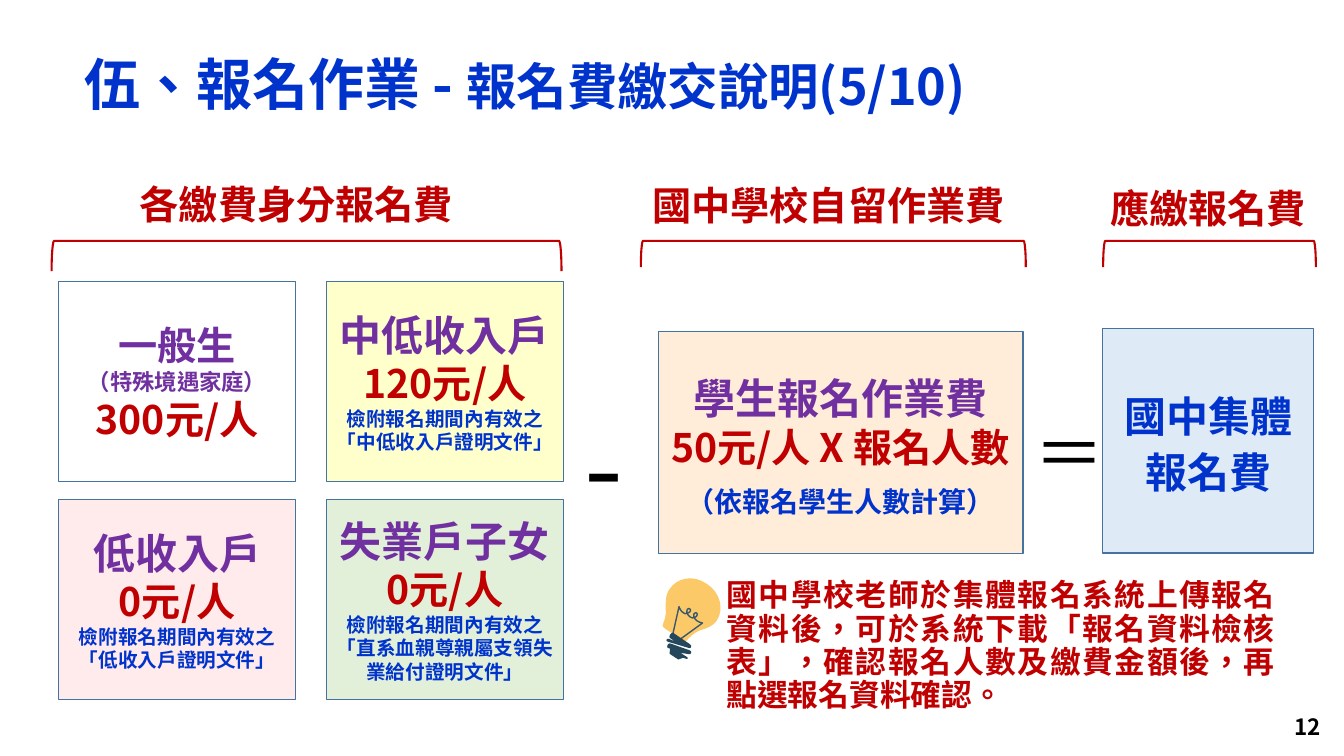
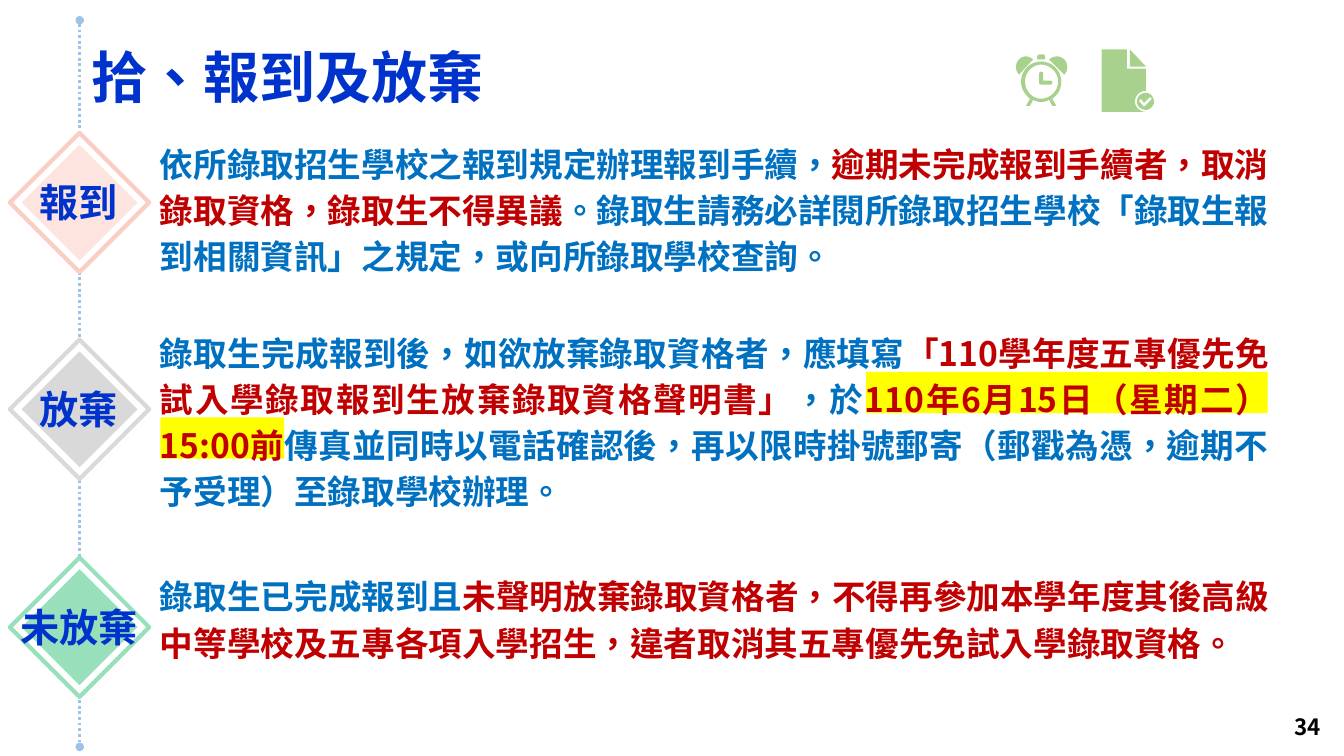
import lxml.etree
import pptx
import pptx.dml.color
import pptx.enum.dml
import pptx.enum.lang
import pptx.enum.shapes
import pptx.enum.text
import pptx.oxml.ns
import pptx.util

Cm = pptx.util.Cm
Pt = pptx.util.Pt
qn = pptx.oxml.ns.qn
PRESET = pptx.enum.shapes.MSO_SHAPE
ALIGN = pptx.enum.text.PP_ALIGN
MIDDLE = pptx.enum.text.MSO_ANCHOR.MIDDLE
colour = pptx.dml.color.RGBColor.from_string

FONT = "Noto Sans CJK SC"
BLUE, RED, PURPLE, SKY, BLACK = "0033CC", "C00000", "7030A0", "0070C0", "000000"
CARD_EDGE, ICON_GREEN = "43739E", "A9D18E"


def paint(shape, fill=None, line=None, width=1):
    shape.shadow.inherit = False
    if fill:
        shape.fill.solid()
        shape.fill.fore_color.rgb = colour(fill)
    else:
        shape.fill.background()
    if line:
        shape.line.color.rgb = colour(line)
        shape.line.width = Pt(width)
    else:
        shape.line.fill.background()


def write(shape, paragraphs, align=ALIGN.LEFT, spacing=None, middle=False, wrap=True, bold=True):
    frame = shape.text_frame
    frame.word_wrap = wrap
    frame.vertical_anchor = MIDDLE if middle else pptx.enum.text.MSO_ANCHOR.TOP
    for index, runs in enumerate(paragraphs):
        paragraph = frame.add_paragraph() if index else frame.paragraphs[0]
        paragraph.alignment = align
        paragraph.line_spacing = spacing
        for words, size, ink in runs:
            run = paragraph.add_run()
            run.text = words
            run.font.size = Pt(size)
            run.font.bold = bold
            run.font.color.rgb = colour(ink)
            run.font.name = FONT
            run.font.language_id = pptx.enum.lang.MSO_LANGUAGE_ID.TRADITIONAL_CHINESE
            lxml.etree.SubElement(run.font._element, qn("a:ea"), typeface=FONT)


deck = pptx.Presentation()
deck.slide_width, deck.slide_height = Cm(33.87), Cm(19.05)

slides = []
for title_place, title, number in [
    ((1.88, 0.89, 29.21, 2.64),
     [("伍、報名作業 - ", 40, BLUE), ("報名費繳交說明(5/10)", 36, BLUE)], "12"),
    ((2.06, 1.02, 29.21, 2.03), [("拾、報到及放棄", 40, BLUE)], "34"),
]:
    slide = deck.slides.add_slide(deck.slide_layouts[6])
    slides.append(slide)
    write(slide.shapes.add_textbox(*map(Cm, title_place)), [title], spacing=0.9, middle=True)
    page_number = slide.shapes.add_textbox(Cm(25.91), Cm(17.81), Cm(7.62), Cm(1.02))
    write(page_number, [[(number, 16, BLACK)]], ALIGN.RIGHT, middle=True)
fees, enrolment = slides

for heading, heading_x, heading_y, heading_w, bracket_x, span, depth in [
    ("各繳費身分報名費", 3.23, 4.42, 8.48, 1.3, 12.85, 0.76),
    ("國中學校自留作業費", 16.13, 4.45, 9.5, 16.15, 9.7, 0.66),
    ("應繳報名費", 27.69, 4.52, 5.51, 27.8, 5.36, 0.66),
]:
    label = fees.shapes.add_textbox(Cm(heading_x), Cm(heading_y), Cm(heading_w), Cm(1.45))
    write(label, [[(heading, 28, RED)]], ALIGN.CENTER, wrap=False)
    shift = (span - depth) / 2
    bracket = fees.shapes.add_shape(
        PRESET.LEFT_BRACKET, Cm(bracket_x + shift), Cm(6.07 - shift), Cm(depth), Cm(span))
    bracket.rotation = 90
    paint(bracket, line=RED, width=1.5)

PROOF = "檢附報名期間內有效之"
for index, (fill, lines) in enumerate([
    ("FFFFFF", [("一般生", 28, PURPLE), ("（特殊境遇家庭）", 16, PURPLE), ("300元/人", 28, RED)]),
    ("FFFFCC", [("中低收入戶", 30, PURPLE), ("120元/人", 28, RED),
                (PROOF + "「中低收入戶證明文件」", 14, BLUE)]),
    ("FFEBEB", [("低收入戶", 30, PURPLE), ("0元/人", 28, RED),
                (PROOF + "「低收入戶證明文件」", 14, BLUE)]),
    ("E2F0D9", [("失業戶子女", 30, PURPLE), ("0元/人", 28, RED),
                (PROOF + "「直系血親尊親屬支領失業給付證明文件」", 14, BLUE)]),
]):
    row, column = divmod(index, 2)
    card = fees.shapes.add_shape(
        PRESET.RECTANGLE, Cm(1.48 + column * 6.75), Cm(7.09 + row * 5.49), Cm(5.97), Cm(5.05))
    paint(card, fill, CARD_EDGE)
    write(card, [[line] for line in lines], ALIGN.CENTER, middle=True)

handling_fee = fees.shapes.add_shape(PRESET.RECTANGLE, Cm(16.59), Cm(8.36), Cm(9.19), Cm(5.59))
paint(handling_fee, "FFECD9", CARD_EDGE)
write(handling_fee, [
    [("學生報名作業費", 30, PURPLE)],
    [("50元/人 X 報名人數", 28, RED)],
    [("（依報名學生人數計算）", 20, BLUE)],
], ALIGN.CENTER, Pt(34), middle=True)
handling_fee.text_frame.paragraphs[0].line_spacing = Pt(40)

total_fee = fees.shapes.add_shape(PRESET.RECTANGLE, Cm(27.79), Cm(8.28), Cm(5.31), Cm(5.66))
paint(total_fee, "DEEBF7", CARD_EDGE)
write(total_fee, [[("國中集體報名費", 30, BLUE)]], ALIGN.CENTER, Pt(40), middle=True)

minus = fees.shapes.add_textbox(Cm(14.48), Cm(9.88), Cm(1.85), Cm(3.68))
write(minus, [[("-", 80, BLACK)]], bold=False)
equals = fees.shapes.add_textbox(Cm(25.83), Cm(10.19), Cm(2.29), Cm(2.39))
write(equals, [[("＝", 50, BLACK)]], wrap=False, bold=False)

reminder = fees.shapes.add_textbox(Cm(18.06), Cm(14.5), Cm(14.33), Cm(3.84))
write(reminder, [[(
    "國中學校老師於集體報名系統上傳報名資料後，可於系統下載「報名資料檢核表」，"
    "確認報名人數及繳費金額後，再點選報名資料確認。", 22, RED)]], ALIGN.JUSTIFY, 0.9)

for x, y, width in [(21.82, 9.37, 10.13), (4.04, 10.52, 3.12)]:
    highlight = enrolment.shapes.add_shape(
        PRESET.RECTANGLE, Cm(x), Cm(y), Cm(width), Cm(1.04))
    paint(highlight, "FFFF00")

timeline = enrolment.shapes.add_connector(
    pptx.enum.shapes.MSO_CONNECTOR.STRAIGHT, Cm(2.01), Cm(0.51), Cm(2.01), Cm(18.82))
timeline.line.color.rgb = colour("9DC3E6")
timeline.line.width = Pt(2)
timeline.line.dash_style = pptx.enum.dml.MSO_LINE.ROUND_DOT
timeline_properties = timeline._element.spPr
for end in ("a:headEnd", "a:tailEnd"):
    lxml.etree.SubElement(timeline_properties.find(qn("a:ln")), qn(end), type="oval")
lxml.etree.SubElement(timeline_properties, qn("a:effectLst"))

OUTER, INNER = 3.51, 2.92
for stage, y, edge, fill in [
    ("報到", 3.35, "FBCEC5", "FDE4DF"),
    ("放棄", 8.56, "D9D9D9", "D9D9D9"),
    ("未放棄", 14.05, "98DFBB", "98DFBB"),
]:
    for size, face, line in [(OUTER, "FFFFFF", edge), (INNER, fill, None)]:
        inset = (OUTER - size) / 2
        diamond = enrolment.shapes.add_shape(
            PRESET.DIAMOND, Cm(0.25 + inset), Cm(y + inset), Cm(size), Cm(size))
        paint(diamond, face, line, 3)
    label = enrolment.shapes.add_textbox(Cm(0.23), Cm(y + 1.03), Cm(OUTER), Cm(1.45))
    write(label, [[(stage, 28, BLUE)]], ALIGN.CENTER, wrap=False)

rules = enrolment.shapes.add_textbox(Cm(3.78), Cm(3.35), Cm(28.45), Cm(13.82))
write(rules, [
    [("依所錄取招生學校之報到規定辦理報到手續，", 24, SKY),
     ("逾期未完成報到手續者，取消錄取資格，錄取生不得異議", 24, RED),
     ("。錄取生請務必詳閱所錄取招生學校「錄取生報到相關資訊」之規定，或向所錄取學校查詢。", 24, SKY)],
    [("錄取生完成報到後，如欲放棄錄取資格者，應填寫", 24, SKY),
     ("「110學年度五專優先免試入學錄取報到生放棄錄取資格聲明書」", 24, RED),
     ("，於", 24, SKY),
     ("110年6月15日（星期二）15:00前", 24, RED),
     ("傳真並同時以電話確認後，再以限時掛號郵寄（郵戳為憑，逾期不予受理）至錄取學校辦理。", 24, SKY)],
    [("錄取生已完成報到且", 24, SKY),
     ("未聲明放棄錄取資格者，不得再參加本學年度其後高級中等學校及五專各項入學招生，"
      "違者取消其五專優先免試入學錄取資格。", 24, RED)],
], ALIGN.JUSTIFY, Pt(33))
rules.text_frame.paragraphs[0].alignment = ALIGN.LEFT
for paragraph, gap in zip(rules.text_frame.paragraphs[1:], (36, 42)):
    paragraph.space_before = Pt(gap)

bulb_glass = [[(693, 576), (678, 571, 663, 578, 659, 592), (657, 598, 659, 605, 661, 611),
               (666, 624, 660, 628, 665, 630), (687, 637), (692, 638, 689, 631, 700, 622),
               (706, 618, 711, 614, 713, 608), (717, 595, 708, 580, 693, 576)]]
bulb_filament = [[(671, 633), (669, 605), (671, 608, 674, 610, 677, 610),
                  (682, 608, 682, 604, 679, 604), (676, 605, 678, 612, 685, 612),
                  (690, 610, 689, 606, 687, 606), (683, 607, 686, 615, 696, 614), (680, 635)]]
bulb_collar = [[(685, 636), (666, 630), (663, 631, 663, 636, 665, 636), (671, 638), (664, 637),
                (661, 637, 661, 640, 664, 640), (685, 640), (688, 640, 688, 637, 685, 636)]]
bulb_cap = [[(682, 649), (675, 647), (683, 646), (686, 646, 686, 642, 683, 642), (663, 641),
             (660, 641, 660, 646, 662, 646), (664, 646), (665, 651), (675, 654), (679, 651),
             (681, 651), (684, 652, 684, 649, 682, 649)]]
alarm_clock = [
    [(1033, 71), (1034, 71, 1035, 72, 1035, 73), (1035, 80), (1042, 80),
     (1045, 80, 1045, 84, 1042, 84), (1033, 84), (1032, 84, 1031, 83, 1031, 82), (1031, 73),
     (1031, 72, 1032, 71, 1033, 71)],
    [(1033, 64), (1024, 64, 1017, 72, 1017, 81), (1017, 90, 1024, 98, 1033, 98),
     (1042, 98, 1050, 90, 1050, 81), (1050, 72, 1042, 64, 1033, 64)],
    [(1033, 61), (1044, 61, 1053, 70, 1053, 81), (1053, 88, 1050, 94, 1044, 98), (1048, 105),
     (1044, 105), (1041, 99), (1036, 102, 1030, 102, 1025, 99), (1022, 105), (1018, 105),
     (1022, 98), (1017, 94, 1013, 88, 1013, 81), (1013, 70, 1022, 61, 1033, 61)],
    [(1018, 56), (1020, 56, 1023, 57, 1025, 59), (1011, 74), (1007, 70, 1007, 63, 1011, 59),
     (1013, 57, 1015, 56, 1018, 56)],
    [(1049, 56), (1051, 56, 1054, 57, 1056, 59), (1060, 63, 1060, 70, 1056, 74), (1041, 59),
     (1043, 57, 1046, 56, 1049, 56)],
    [(1032, 54), (1035, 54), (1036, 54, 1037, 55, 1037, 57), (1037, 59), (1029, 59), (1029, 57),
     (1029, 55, 1030, 54, 1032, 54)],
]
checked_page = [
    [(1141, 96), (1135, 102), (1132, 98), (1130, 100), (1135, 106), (1143, 98)],
    [(1137, 92), (1141, 92, 1145, 96, 1145, 101), (1145, 105, 1141, 109, 1137, 109),
     (1132, 109, 1128, 105, 1128, 101), (1128, 96, 1132, 92, 1137, 92)],
    [(1093, 49), (1118, 49), (1118, 68), (1137, 68), (1137, 90),
     (1131, 90, 1126, 95, 1126, 101), (1126, 106, 1131, 111, 1137, 111), (1093, 111)],
    [(1121, 49), (1137, 66), (1121, 66)],
]

CURVE_STEPS = 8
FINENESS = 10
icon_unit = Cm(2.54) / 100 / FINENESS
for slide, outlines, fill, line, tilt in [
    (fees, bulb_glass, "FCC969", None, 16.7),
    (fees, bulb_filament, None, "3B596C", 16.7),
    (fees, bulb_collar, "25475C", None, 16.7),
    (fees, bulb_cap, "25475C", None, 16.7),
    (enrolment, alarm_clock, ICON_GREEN, None, 0),
    (enrolment, checked_page, ICON_GREEN, None, 0),
]:
    builder = None
    for outline in outlines:
        points = [outline[0]]
        for step in outline[1:]:
            if len(step) == 2:
                points.append(step)
                continue
            start, controls = points[-1], (step[:2], step[2:4], step[4:])
            for part in range(1, CURVE_STEPS + 1):
                t = part / CURVE_STEPS
                weights = (1 - t) ** 3, 3 * t * (1 - t) ** 2, 3 * t * t * (1 - t), t ** 3
                points.append(tuple(
                    sum(w * p[axis] for w, p in zip(weights, (start, *controls)))
                    for axis in (0, 1)))
        points = [(x * FINENESS, y * FINENESS) for x, y in points]
        if builder is None:
            builder = slide.shapes.build_freeform(*points[0], scale=icon_unit)
        else:
            builder.move_to(*points[0])
        builder.add_line_segments(points[1:], close=fill is not None)
    icon = builder.convert_to_shape()
    icon.rotation = tilt
    paint(icon, fill, line)

deck.save("out.pptx")
